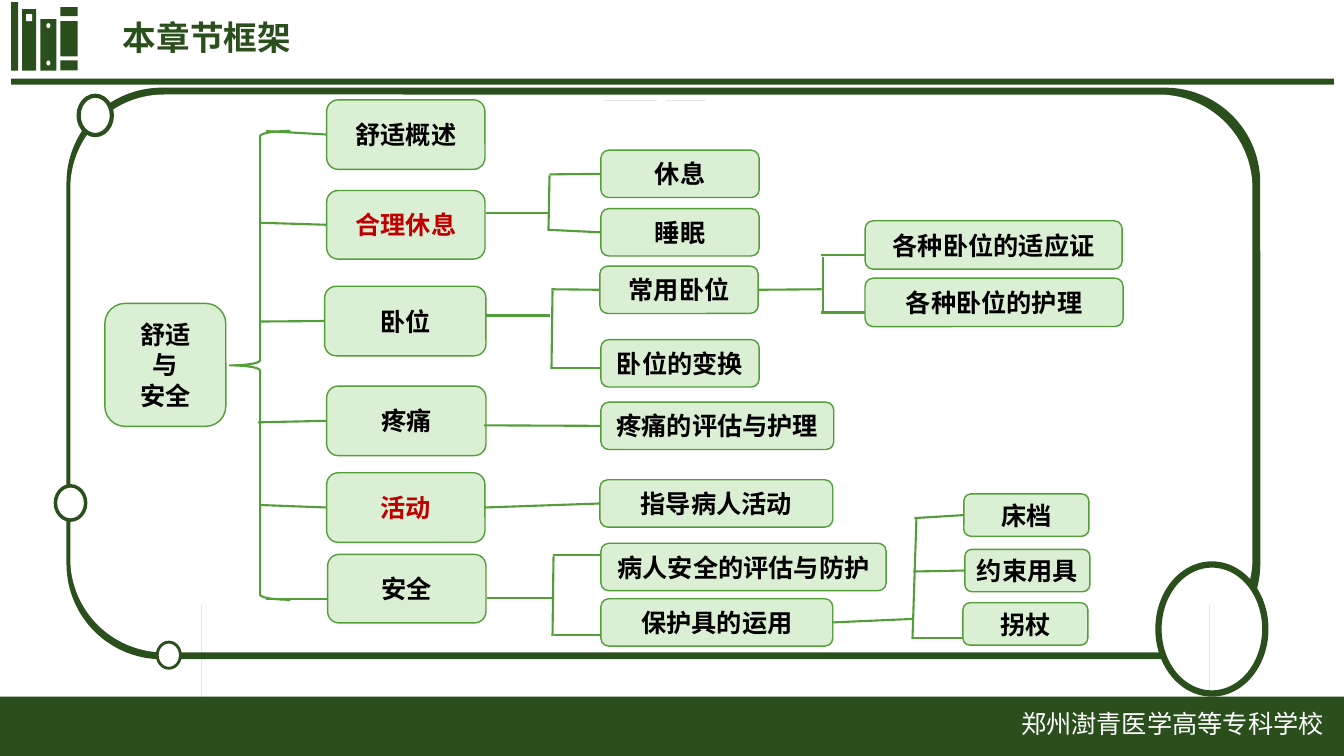
from lxml.etree import SubElement
from pptx import Presentation
from pptx.dml.color import RGBColor
from pptx.enum.shapes import MSO_CONNECTOR, MSO_SHAPE
from pptx.enum.text import MSO_ANCHOR, PP_ALIGN
from pptx.oxml.ns import qn
from pptx.util import Inches, Pt

FONT = "Noto Sans CJK SC"
DARK = RGBColor(0x2A, 0x4F, 0x1C)
GREEN = RGBColor(0x54, 0x9E, 0x39)
PALE = RGBColor(0xDB, 0xEF, 0xD4)
RED = RGBColor(0xC0, 0x00, 0x00)
BLACK = RGBColor(0x00, 0x00, 0x00)
WHITE = RGBColor(0xFF, 0xFF, 0xFF)

TITLE = "本章节框架"
SCHOOL = "郑州澍青医学高等专科学校"

# text, left, top, width, height
TOPICS = [
    ("舒适\n与\n安全", 1.04, 3.01, 1.2, 1.22),
    ("舒适概述", 3.24, 0.99, 1.57, 0.69),
    ("合理休息", 3.24, 1.89, 1.57, 0.68),
    ("卧位", 3.22, 2.84, 1.6, 0.69),
    ("疼痛", 3.24, 3.83, 1.58, 0.69),
    ("活动", 3.24, 4.69, 1.57, 0.69),
    ("安全", 3.25, 5.5, 1.57, 0.68),
    ("休息", 5.96, 1.49, 1.57, 0.47),
    ("睡眠", 5.96, 2.07, 1.57, 0.47),
    ("常用卧位", 5.95, 2.64, 1.57, 0.47),
    ("卧位的变换", 5.96, 3.37, 1.57, 0.47),
    ("疼痛的评估与护理", 5.96, 3.99, 2.31, 0.47),
    ("指导病人活动", 5.95, 4.76, 2.31, 0.47),
    ("病人安全的评估与防护", 5.96, 5.39, 2.83, 0.47),
    ("保护具的运用", 5.96, 5.94, 2.3, 0.47),
    ("各种卧位的适应证", 8.58, 2.19, 2.55, 0.48),
    ("各种卧位的护理", 8.58, 2.76, 2.56, 0.48),
    ("床档", 9.56, 4.9, 1.24, 0.42),
    ("约束用具", 9.57, 5.45, 1.24, 0.42),
    ("拐杖", 9.55, 5.98, 1.24, 0.42),
]
KEY_TOPICS = {"合理休息", "活动"}

# from x, from y, to x, to y
BRANCHES = [
    (2.64, 1.3, 3.24, 1.3), (2.58, 2.21, 3.24, 2.21), (2.58, 3.19, 3.22, 3.18),
    (2.56, 4.19, 3.24, 4.19), (2.58, 5.01, 3.24, 5.03), (2.64, 5.94, 3.25, 5.94),
    (4.82, 2.11, 5.45, 2.11), (5.45, 1.74, 5.44, 2.29),
    (5.45, 1.73, 5.96, 1.73), (5.44, 2.28, 5.96, 2.28),
    (4.82, 3.13, 5.46, 3.13), (5.48, 2.88, 5.47, 3.66),
    (5.47, 2.87, 5.95, 2.87), (5.47, 3.65, 5.96, 3.65),
    (7.52, 2.87, 8.15, 2.87), (8.16, 2.55, 8.16, 3.11),
    (8.14, 2.53, 8.58, 2.53), (8.14, 3.1, 8.58, 3.1),
    (4.8, 4.22, 5.96, 4.22), (4.83, 5, 5.95, 5),
    (4.83, 5.93, 5.48, 5.93), (5.49, 5.52, 5.48, 6.31),
    (5.48, 5.51, 5.96, 5.51), (5.49, 6.3, 5.96, 6.3),
    (8.26, 6.14, 9.06, 6.14), (9.09, 5.13, 9.05, 6.34),
    (9.07, 5.14, 9.56, 5.14), (9.06, 5.67, 9.57, 5.67), (9.06, 6.33, 9.55, 6.33),
]
SNAP = 0.04

DARK_BARS = [
    (0.11, 0.78, 13.12, 0.06), (0, 6.91, 13.33, 0.59),
    (0.11, 0.02, 0.07, 0.68), (0.22, 0.09, 0.14, 0.61), (0.4, 0.19, 0.16, 0.51),
    (0.6, 0.07, 0.17, 0.09), (0.6, 0.21, 0.17, 0.35), (0.6, 0.6, 0.17, 0.1),
]
BOOK_DOTS = [(0.46, 0.23), (0.46, 0.6)]

# left, top, width, height, line width
RINGS = [
    (11.49, 5.6, 1.06, 1.28, 4.5), (0.78, 0.95, 0.33, 0.39, 3),
    (0.55, 4.82, 0.3, 0.34, 2.5), (1.56, 6.37, 0.23, 0.26, 2),
]
# heart left, top, width, height, then its cross
HEARTS = [
    ((11.73, 5.83, 0.49, 0.51), (11.89, 6.01, 0.18, 0.21)),
    ((6.31, 0.81, 0.49, 0.51), (6.47, 0.99, 0.18, 0.21)),
    ((0.83, 1.04, 0.25, 0.26), (0.9, 1.12, 0.11, 0.12)),
    ((0.59, 4.9, 0.21, 0.22), (0.65, 4.95, 0.09, 0.1)),
    ((1.61, 6.46, 0.13, 0.14), (1.65, 6.5, 0.05, 0.06)),
]
# right half of a heart in a unit square, as Bezier segments
HEART_HALF = [
    ((0.5, 0.22), (0.56, 0.08), (0.62, 0), (0.75, 0)),
    ((0.75, 0), (0.89, 0), (1, 0.14), (1, 0.29)),
    ((1, 0.29), (1, 0.57), (0.75, 0.73), (0.5, 1)),
]
HAND = [
    (12.4, 6.37), (12.32, 6.35), (12.24, 6.34), (12.18, 6.33), (12.12, 6.36),
    (12.05, 6.4), (12, 6.42), (11.95, 6.44), (11.92, 6.46), (11.9, 6.48),
    (11.9, 6.51), (11.91, 6.54), (11.97, 6.55), (12.03, 6.55), (12.09, 6.54),
    (12.03, 6.57), (11.96, 6.58), (11.91, 6.57), (11.88, 6.53), (11.88, 6.49),
    (11.9, 6.45), (11.71, 6.37), (11.69, 6.37), (11.65, 6.38), (11.64, 6.41),
    (11.65, 6.44), (11.67, 6.46), (11.92, 6.64), (11.96, 6.67), (12, 6.68),
    (12.03, 6.67), (12.14, 6.62), (12.25, 6.56), (12.3, 6.56), (12.4, 6.58),
]

deck = Presentation()
deck.slide_width, deck.slide_height = Inches(13.33), Inches(7.5)
page = deck.slides.add_slide(deck.slide_layouts[6])


def paint(shape, fill=None, line=None, width=1):
    shape.shadow.inherit = False
    if fill is None:
        shape.fill.background()
    else:
        shape.fill.solid()
        shape.fill.fore_color.rgb = fill
    if line is None:
        shape.line.fill.background()
    else:
        shape.line.color.rgb = line
        shape.line.width = Pt(width)
    return shape


def add_preset(kind, place, **look):
    return paint(page.shapes.add_shape(kind, *map(Inches, place)), **look)


def add_outline(points):
    builder = page.shapes.build_freeform(*points[0], scale=Inches(1))
    builder.add_line_segments(points[1:], close=True)
    return paint(builder.convert_to_shape(), fill=DARK)


def write(box, text, size=18, color=BLACK, bold=False, align=PP_ALIGN.LEFT, wrap=True):
    frame = box.text_frame
    frame.word_wrap = wrap
    frame.vertical_anchor = MSO_ANCHOR.MIDDLE
    for index, line in enumerate(text.split("\n")):
        para = frame.paragraphs[0] if index == 0 else frame.add_paragraph()
        para.alignment = align
        span = para.add_run()
        span.text = line
        span.font.name, span.font.size, span.font.bold = FONT, Pt(size), bold
        span.font.color.rgb = color
        SubElement(span.font._element, qn("a:ea")).set("typeface", FONT)


def add_text(text, place, **style):
    write(page.shapes.add_textbox(*map(Inches, place)), text, **style)


def bezier(start, pull, push, end, steps=10):
    for step in range(steps):
        t = step / steps
        yield tuple((1 - t) ** 3 * a + 3 * t * (1 - t) ** 2 * b + 3 * t * t * (1 - t) * c + t ** 3 * d
                    for a, b, c, d in zip(start, pull, push, end))


def add_heart(left, top, width, height):
    half = [point for segment in HEART_HALF for point in bezier(*segment)]
    whole = half + [(0.5, 1)] + [(1 - x, y) for x, y in half[:0:-1]]
    add_outline([(left + x * width, top + y * height) for x, y in whole])


def side_at(x, y):
    """Return the topic box and side whose middle lies at the point, if any."""
    for box, (_, left, top, width, height) in zip(topic_boxes, TOPICS):
        for side, edge in ((1, left), (3, left + width)):
            if abs(x - edge) < SNAP and abs(y - top - height / 2) < SNAP:
                return box, side
    return None


def add_branch(x1, y1, x2, y2):
    line = page.shapes.add_connector(MSO_CONNECTOR.STRAIGHT, *map(Inches, (x1, y1, x2, y2)))
    line.line.color.rgb = GREEN
    line.line.width = Pt(1.5)
    SubElement(line._element.spPr, qn("a:effectLst"))
    for join, end in ((line.begin_connect, side_at(x1, y1)), (line.end_connect, side_at(x2, y2))):
        if end:
            join(*end)


for bar in DARK_BARS:
    add_preset(MSO_SHAPE.RECTANGLE, bar, fill=DARK)
add_preset(MSO_SHAPE.RECTANGLE, (0.26, 0.14, 0.06, 0.07), fill=WHITE)
for dot in BOOK_DOTS:
    add_preset(MSO_SHAPE.OVAL, (*dot, 0.04, 0.05), fill=WHITE)
add_text(TITLE, (1.12, 0.13, 3.83, 0.48), size=24, color=DARK, bold=True)

add_preset(MSO_SHAPE.ROUNDED_RECTANGLE, (0.66, 0.87, 11.84, 5.67), fill=DARK)
add_preset(MSO_SHAPE.ROUNDED_RECTANGLE, (0.71, 0.95, 11.7, 5.51), fill=WHITE, line=WHITE, width=1.75)
for *place, width in RINGS:
    add_preset(MSO_SHAPE.OVAL, place, fill=WHITE, line=DARK, width=width)
for heart, cross in HEARTS:
    add_heart(*heart)
    add_preset(MSO_SHAPE.CROSS, cross, fill=WHITE)
add_outline(HAND)

add_preset(MSO_SHAPE.LEFT_BRACE, (2.28, 1.3, 0.6, 4.65), line=GREEN, width=1.5)
topic_boxes = []
for text, *place in TOPICS:
    box = add_preset(MSO_SHAPE.ROUNDED_RECTANGLE, place, fill=PALE, line=GREEN)
    write(box, text, color=RED if text in KEY_TOPICS else BLACK, bold=True, align=PP_ALIGN.CENTER)
    topic_boxes.append(box)
for branch in BRANCHES:
    add_branch(*branch)

add_text(SCHOOL, (10.03, 6.98, 3.23, 0.4), color=WHITE, wrap=False)
deck.save("out.pptx")
